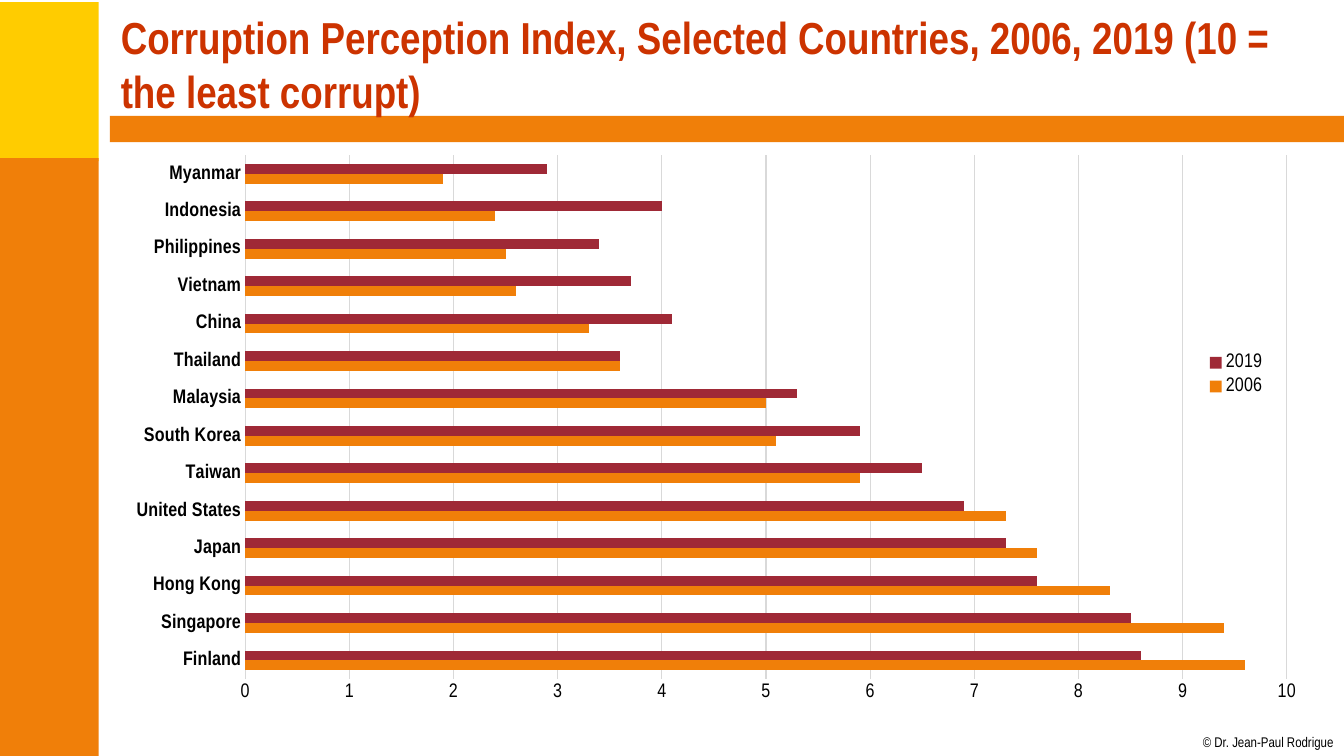
from lxml import etree
from pptx import Presentation
from pptx.chart.data import CategoryChartData
from pptx.dml.color import RGBColor
from pptx.enum.chart import XL_CHART_TYPE, XL_LEGEND_POSITION, XL_TICK_MARK
from pptx.enum.shapes import MSO_SHAPE
from pptx.enum.text import MSO_ANCHOR
from pptx.oxml.ns import qn
from pptx.util import Pt

BAR_CLUSTERED = XL_CHART_TYPE.BAR_CLUSTERED
LEGEND_RIGHT = XL_LEGEND_POSITION.RIGHT
NO_TICKS = XL_TICK_MARK.NONE
RECTANGLE = MSO_SHAPE.RECTANGLE
MIDDLE = MSO_ANCHOR.MIDDLE
TOP = MSO_ANCHOR.TOP

YELLOW = RGBColor(0xFF, 0xCC, 0x00)
ORANGE = RGBColor(0xF0, 0x7F, 0x09)
CRIMSON = RGBColor(0x9F, 0x29, 0x36)
TITLE_RED = RGBColor(0xCC, 0x33, 0x00)
BLACK = RGBColor(0x00, 0x00, 0x00)
GRID_GREY = RGBColor(0xD9, 0xD9, 0xD9)

EMU_PER_PX = 9144  # 100 px to the inch

SCORES = [  # country, 2006, 2019
    ("Finland", 9.6, 8.6),
    ("Singapore", 9.4, 8.5),
    ("Hong Kong", 8.3, 7.6),
    ("Japan", 7.6, 7.3),
    ("United States", 7.3, 6.9),
    ("Taiwan", 5.9, 6.5),
    ("South Korea", 5.1, 5.9),
    ("Malaysia", 5, 5.3),
    ("Thailand", 3.6, 3.6),
    ("China", 3.3, 4.1),
    ("Vietnam", 2.6, 3.7),
    ("Philippines", 2.5, 3.4),
    ("Indonesia", 2.4, 4),
    ("Myanmar", 1.9, 2.9),
]
SERIES_COLORS = {"2006": ORANGE, "2019": CRIMSON}


def px(*lengths):
    return [length * EMU_PER_PX for length in lengths]


class SlideBuilder:
    font_name = "Arial Narrow"

    def __init__(self, page):
        self.page = page

    def style_font(self, font, size, color=BLACK, bold=False):
        font.name = self.font_name
        font.size = Pt(size)
        font.bold = bold
        font.color.rgb = color

    def style_line(self, line):
        line.color.rgb = GRID_GREY
        line.width = Pt(0.75)

    def rectangle(self, left, top, width, height, color):
        shape = self.page.shapes.add_shape(RECTANGLE, *px(left, top, width, height))
        shape.shadow.inherit = False
        shape.fill.solid()
        shape.fill.fore_color.rgb = color
        shape.line.fill.background()

    def text(self, left, top, width, height, words, size, color=BLACK,
             bold=False, anchor=TOP, wrap=True, insets=(10, 5)):
        box = self.page.shapes.add_textbox(*px(left, top, width, height))
        frame = box.text_frame
        frame.word_wrap = wrap
        frame.vertical_anchor = anchor
        frame.margin_left, frame.margin_top = px(*insets)
        frame.margin_right, frame.margin_bottom = px(*insets)
        para = frame.paragraphs[0]
        para.text = words
        self.style_font(para.font, size, color, bold)

    def place(self, part, index, fractions, inner=False):
        """Fix a chart part at x, y, w, h, given as fractions of the chart."""
        for old in part.findall(qn("c:layout")):
            part.remove(old)
        layout = etree.Element(qn("c:layout"))
        manual = etree.SubElement(layout, qn("c:manualLayout"))
        settings = [("layoutTarget", "inner")] if inner else []
        settings += [("xMode", "edge"), ("yMode", "edge")]
        settings += zip("xywh", fractions)
        for name, value in settings:
            etree.SubElement(manual, qn(f"c:{name}")).set("val", str(value))
        part.insert(index, layout)

    def bar_chart(self, left, top, width, height):
        countries, *columns = zip(*SCORES)
        data = CategoryChartData()
        data.categories = countries
        for year, values in zip(SERIES_COLORS, columns):
            data.add_series(year, values)
        frame = self.page.shapes.add_chart(
            BAR_CLUSTERED, *px(left, top, width, height), data)
        chart = frame.chart
        chart.has_title = False
        self.style_font(chart.font, 14)

        plot = chart.plots[0]
        plot.gap_width = 182
        plot.overlap = 0
        plot.vary_by_categories = False
        for series in plot.series:
            series.format.fill.solid()
            series.format.fill.fore_color.rgb = SERIES_COLORS[series.name]
            series.invert_if_negative = False

        countries_axis, score_axis = chart.category_axis, chart.value_axis
        for axis in (countries_axis, score_axis):
            axis.major_tick_mark = axis.minor_tick_mark = NO_TICKS
            self.style_font(axis.tick_labels.font, 14, bold=axis is countries_axis)
        self.style_line(countries_axis.format.line)
        score_axis.format.line.fill.background()
        score_axis.minimum_scale = 0
        score_axis.maximum_scale = 10
        score_axis.major_unit = 1
        score_axis.has_major_gridlines = True
        self.style_line(score_axis.major_gridlines.format.line)

        chart.has_legend = True
        legend = chart.legend
        legend.position = LEGEND_RIGHT
        legend.include_in_layout = False
        self.style_font(legend.font, 14)

        plot_area = chart.element.find(f".//{qn('c:plotArea')}")
        legend_part = chart.element.find(f".//{qn('c:legend')}")
        self.place(plot_area, 0, (0.111, 0.019, 0.861, 0.898), inner=True)
        self.place(legend_part, 1, (0.9, 0.35, 0.06, 0.09))


def main():
    deck = Presentation()
    deck.slide_width, deck.slide_height = px(1333, 750)
    builder = SlideBuilder(deck.slides.add_slide(deck.slide_layouts[6]))
    builder.rectangle(-2, 2, 100, 158, YELLOW)
    builder.rectangle(-2, 157, 100, 593, ORANGE)
    builder.rectangle(109, 115, 1224, 26, ORANGE)
    builder.text(1193, 728, 131, 17, "© Dr. Jean-Paul Rodrigue", 10,
                 wrap=False, insets=(0, 0))
    builder.text(110, 11, 1200, 104,
                 "Corruption Perception Index, Selected Countries, 2006, 2019 "
                 "(10 = the least corrupt)",
                 32, TITLE_RED, bold=True, anchor=MIDDLE)
    builder.bar_chart(110, 143, 1200, 579)
    deck.save("out.pptx")


if __name__ == "__main__":
    main()
